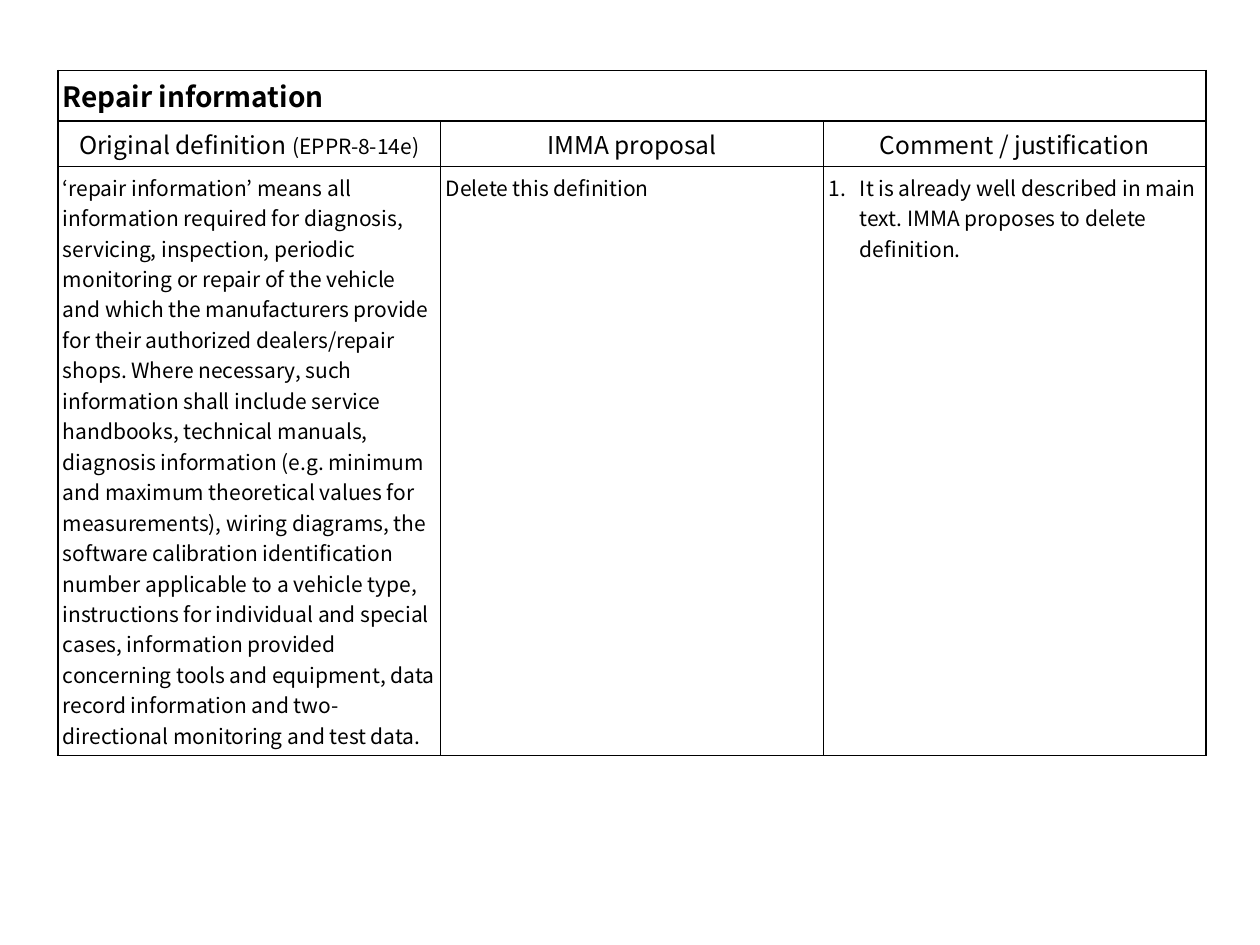
from dataclasses import dataclass

from lxml import etree
from pptx import Presentation
from pptx.dml.color import RGBColor
from pptx.enum.text import MSO_ANCHOR, PP_ALIGN
from pptx.oxml.ns import qn
from pptx.util import Pt

LEFT, CENTER = PP_ALIGN.LEFT, PP_ALIGN.CENTER
TOP = MSO_ANCHOR.TOP
FONT = "Noto Sans CJK JP"
COLORS = {"ink": "000000", "paper": "FFFFFF"}
BLANK_LAYOUT = 6

TABLE_LEFT, TABLE_TOP, TABLE_HEIGHT = 33.12, 40.32, 341.28
COLUMN_WIDTH = 218.7
ROW_HEIGHTS = (21.6, 21.6, 60.48)
CELL_MARGIN = 2.88
NUMBER_INDENT = 18
HEAVY, THIN = 1, 0.5


@dataclass(frozen=True)
class TextRun:
    text: str
    size: float
    bold: bool = False


@dataclass(frozen=True)
class CellText:
    runs: tuple[TextRun, ...]
    align: int = LEFT
    numbered: bool = False


HEADING = CellText((TextRun("Repair information", 16, True),))
COLUMN_HEADS = (
    CellText((TextRun("Original definition ", 14), TextRun("(EPPR-8-14e)", 12)), CENTER),
    CellText((TextRun("IMMA proposal", 14),), CENTER),
    CellText((TextRun("Comment / justification", 14),), CENTER),
)
DEFINITION = (
    "‘repair information’ means all information required for diagnosis, servicing, "
    "inspection, periodic monitoring or repair of the vehicle and which the "
    "manufacturers provide for their authorized dealers/repair shops. Where necessary, "
    "such information shall include service handbooks, technical manuals, diagnosis "
    "information (e.g. minimum and maximum theoretical values for measurements), wiring "
    "diagrams, the software calibration identification number applicable to a vehicle "
    "type, instructions for individual and special cases, information provided "
    "concerning tools and equipment, data record information and two-directional "
    "monitoring and test data."
)
JUSTIFICATION = (
    "It is already well described in main text. IMMA proposes to delete definition."
)
BODY = (
    CellText((TextRun(DEFINITION, 12),)),
    CellText((TextRun("Delete this definition", 12),)),
    CellText((TextRun(JUSTIFICATION, 12),), numbered=True),
)


def write_cell(cell, content: CellText) -> None:
    """Fill a cell with formatted runs, numbered if asked."""
    paragraph = cell.text_frame.paragraphs[0]
    paragraph.alignment = content.align
    for item in content.runs:
        run = paragraph.add_run()
        run.text = item.text
        run.font.name = FONT
        run.font.size = Pt(item.size)
        run.font.bold = item.bold
        run.font.color.rgb = RGBColor.from_string(COLORS["ink"])
    if content.numbered:
        properties = paragraph._p.get_or_add_pPr()
        properties.set("marL", str(Pt(NUMBER_INDENT)))
        properties.set("indent", str(-Pt(NUMBER_INDENT)))
        etree.SubElement(properties, qn("a:buFont"), typeface="+mj-lt")
        etree.SubElement(properties, qn("a:buAutoNum"), type="arabicPeriod")


def style_cell(cell, borders: dict[str, float]) -> None:
    """Set margins, fill and the four borders of a cell."""
    cell.margin_left = cell.margin_right = Pt(CELL_MARGIN)
    cell.margin_top = cell.margin_bottom = Pt(CELL_MARGIN)
    cell.vertical_anchor = TOP
    cell.fill.solid()
    cell.fill.fore_color.rgb = RGBColor.from_string(COLORS["paper"])
    properties = cell._tc.get_or_add_tcPr()
    for position, (side, width) in enumerate(borders.items()):
        line = etree.Element(qn(f"a:ln{side}"), w=str(Pt(width)))
        fill = etree.SubElement(line, qn("a:solidFill"))
        etree.SubElement(fill, qn("a:srgbClr"), val=COLORS["ink"])
        properties.insert(position, line)


def add_definition_table(slide) -> None:
    row_count, column_count = len(ROW_HEIGHTS), len(COLUMN_HEADS)
    table = slide.shapes.add_table(
        row_count, column_count, Pt(TABLE_LEFT), Pt(TABLE_TOP),
        Pt(COLUMN_WIDTH * column_count), Pt(TABLE_HEIGHT),
    ).table
    table.first_row = table.horz_banding = False
    for column in table.columns:
        column.width = Pt(COLUMN_WIDTH)
    for row, height in zip(table.rows, ROW_HEIGHTS):
        row.height = Pt(height)

    # Heavy frame and row rules, thin column rules and bottom edge
    for r in range(row_count):
        for c in range(column_count):
            style_cell(table.cell(r, c), {
                "L": HEAVY if c == 0 else THIN,
                "R": HEAVY if r == 0 or c == column_count - 1 else THIN,
                "T": HEAVY,
                "B": THIN if r == row_count - 1 else HEAVY,
            })

    # Heading across all columns, then column heads and body
    table.cell(0, 0).merge(table.cell(0, column_count - 1))
    write_cell(table.cell(0, 0), HEADING)
    for r, contents in enumerate((COLUMN_HEADS, BODY), start=1):
        for c, content in enumerate(contents):
            write_cell(table.cell(r, c), content)


def main() -> None:
    presentation = Presentation()
    presentation.slide_width, presentation.slide_height = Pt(720), Pt(540)
    slide = presentation.slides.add_slide(presentation.slide_layouts[BLANK_LAYOUT])
    add_definition_table(slide)
    presentation.save("out.pptx")


if __name__ == "__main__":
    main()
